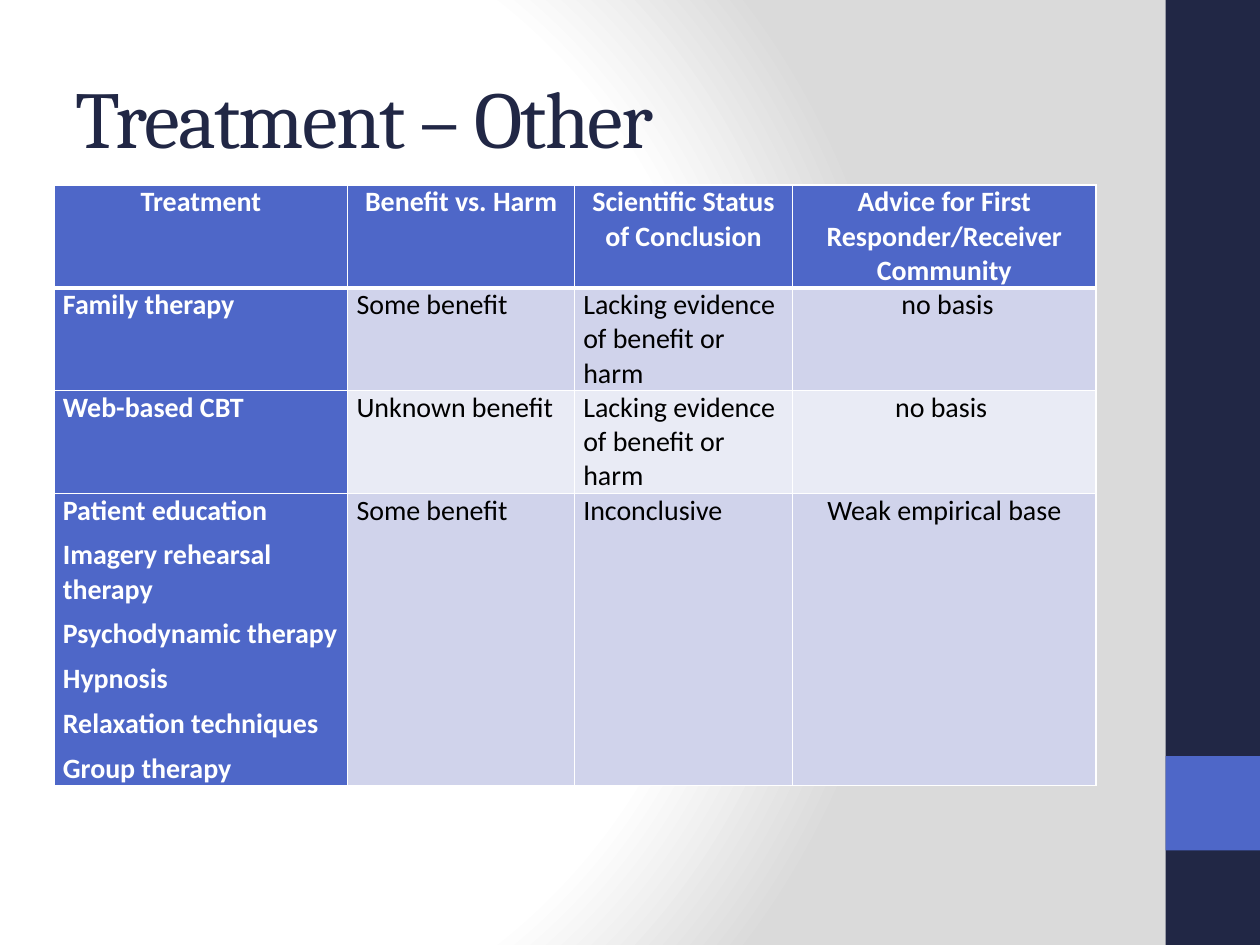
import pptx
import pptx.dml.color
import pptx.enum.shapes
import pptx.enum.text
import pptx.oxml
import pptx.oxml.ns
import pptx.util
from dataclasses import dataclass
from pptx.util import Inches

PP_ALIGN = pptx.enum.text.PP_ALIGN


@dataclass(frozen=True)
class Theme:
    navy: str = "212745"
    blue: str = "4E67C8"
    white: str = "FFFFFF"
    grey: str = "DADADA"
    black: str = "000000"
    bands: tuple = ("D0D3EB", "E9EBF5")
    title_font: str = "Cambria"
    body_font: str = "Calibri"
    title_size: int = 46
    body_size: int = 16


THEME = Theme()
COLUMN_WIDTHS = (2.33, 1.8, 1.73, 2.41)
ROW_HEIGHTS = (0.81, 0.81, 0.81, 2.32)
CENTRED_COLUMN = 3
ROWS = (
    ("Treatment", "Benefit vs. Harm", "Scientific Status of Conclusion",
     "Advice for First Responder/Receiver Community"),
    ("Family therapy", "Some benefit", "Lacking evidence of benefit or harm", " no basis"),
    ("Web-based CBT", "Unknown benefit", "Lacking evidence of benefit or harm", "no basis "),
    (("Patient education", "Imagery rehearsal therapy", "Psychodynamic therapy",
      "Hypnosis", "Relaxation techniques", "Group therapy"),
     "Some benefit", "Inconclusive", "Weak empirical base"),
)


def rgb(value):
    return pptx.dml.color.RGBColor.from_string(value)


def set_background(s):
    """Fill the slide with a radial white-to-grey gradient centred on the left."""
    stops = "".join(
        f'<a:gs pos="{pos * 1000}"><a:srgbClr val="{color}"/></a:gs>'
        for pos, color in ((0, THEME.white), (75, THEME.white), (100, THEME.grey)))
    bg = pptx.oxml.parse_xml(
        f'<p:bg {pptx.oxml.ns.nsdecls("p", "a")}><p:bgPr><a:gradFill rotWithShape="1">'
        f'<a:gsLst>{stops}</a:gsLst><a:path path="circle">'
        '<a:fillToRect l="20000" t="50000" r="100000" b="50000"/></a:path>'
        '</a:gradFill><a:effectLst/></p:bgPr></p:bg>')
    s._element.cSld.insert(0, bg)


def add_block(s, left, top, width, height, color):
    sp = s.shapes.add_shape(pptx.enum.shapes.MSO_SHAPE.RECTANGLE, Inches(left),
                            Inches(top), Inches(width), Inches(height))
    sp.shadow.inherit = False
    sp.fill.solid()
    sp.fill.fore_color.rgb = rgb(color)
    sp.line.fill.background()


def add_run(p, text, font, size, color, bold=False):
    r = p.add_run()
    r.text = text
    r.font.name = font
    r.font.size = pptx.util.Pt(size)
    r.font.color.rgb = rgb(color)
    r.font.bold = bold
    return r


def set_title(s, text):
    sp = s.shapes.title
    sp.left, sp.top, sp.width, sp.height = map(Inches, (0.5, 0.3, 8.33, 1.25))
    tf = sp.text_frame
    tf.vertical_anchor = pptx.enum.text.MSO_ANCHOR.MIDDLE
    p = tf.paragraphs[0]
    p.alignment = PP_ALIGN.LEFT
    r = add_run(p, text, THEME.title_font, THEME.title_size, THEME.navy)
    r.font._element.set("spc", "-100")


def set_borders(cell, top, bottom):
    """Draw white cell borders; top and bottom are widths in points."""
    tc_pr = cell._tc.get_or_add_tcPr()
    sides = (("lnL", 1), ("lnR", 1), ("lnT", top), ("lnB", bottom))
    for i, (tag, width) in enumerate(sides):
        tc_pr.insert(i, pptx.oxml.parse_xml(
            f'<a:{tag} {pptx.oxml.ns.nsdecls("a")} w="{pptx.util.Pt(width)}">'
            f'<a:solidFill><a:srgbClr val="{THEME.white}"/></a:solidFill></a:{tag}>'))


def fill_cell(cell, content, row, col):
    heading = row == 0 or col == 0
    cell.fill.solid()
    cell.fill.fore_color.rgb = rgb(THEME.blue if heading else THEME.bands[(row - 1) % 2])
    cell.margin_left = cell.margin_right = Inches(0.07)
    cell.margin_top = cell.margin_bottom = 0
    set_borders(cell, top=3 if row == 1 else 1, bottom=3 if row == 0 else 1)
    tf = cell.text_frame
    for i, line in enumerate((content,) if isinstance(content, str) else content):
        p = tf.add_paragraph() if i else tf.paragraphs[0]
        centred = row == 0 or col == CENTRED_COLUMN
        p.alignment = PP_ALIGN.CENTER if centred else PP_ALIGN.LEFT
        p.space_after = pptx.util.Pt(6)
        add_run(p, line, THEME.body_font, THEME.body_size,
                THEME.white if heading else THEME.black, heading)


def add_treatment_table(s):
    table = s.shapes.add_table(
        len(ROWS), len(COLUMN_WIDTHS), Inches(0.43), Inches(1.47),
        Inches(sum(COLUMN_WIDTHS)), Inches(sum(ROW_HEIGHTS))).table
    table.first_col = True
    for column, width in zip(table.columns, COLUMN_WIDTHS):
        column.width = Inches(width)
    for row, height in zip(table.rows, ROW_HEIGHTS):
        row.height = Inches(height)
    for i, contents in enumerate(ROWS):
        for j, content in enumerate(contents):
            fill_cell(table.cell(i, j), content, i, j)


def main():
    prs = pptx.Presentation()
    prs.slide_width, prs.slide_height = Inches(10), Inches(7.5)
    s = prs.slides.add_slide(prs.slide_layouts[5])
    set_background(s)
    add_block(s, 9.25, 0, 0.75, 7.5, THEME.navy)
    add_block(s, 9.25, 6, 0.75, 0.75, THEME.blue)
    set_title(s, "Treatment – Other")
    add_treatment_table(s)
    prs.save("out.pptx")


if __name__ == "__main__":
    main()
